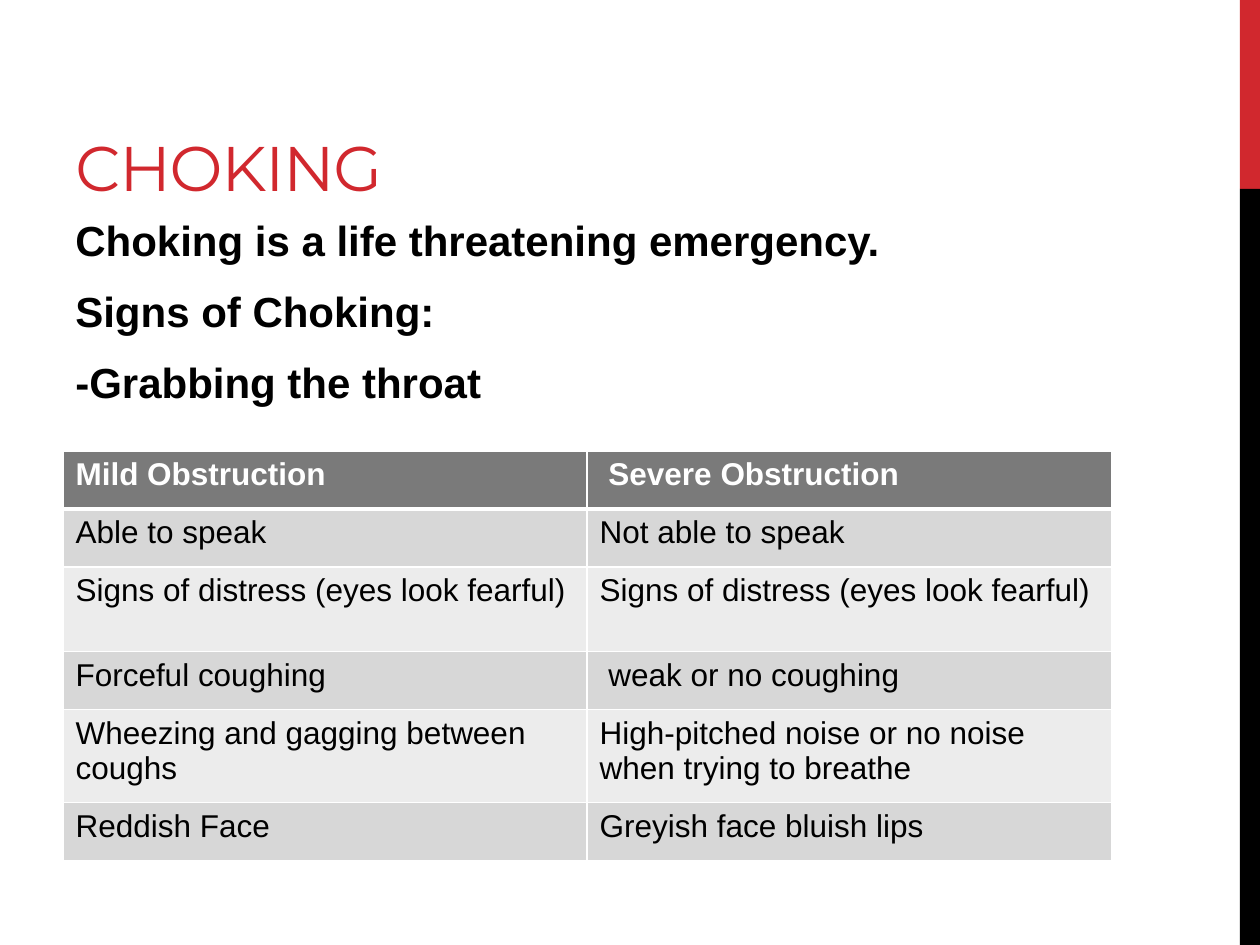
from lxml import etree
from pptx import Presentation
from pptx.dml.color import RGBColor
from pptx.enum.shapes import MSO_SHAPE
from pptx.enum.text import MSO_ANCHOR
from pptx.oxml.ns import qn
from pptx.util import Inches, Pt

RECT = MSO_SHAPE.RECTANGLE
TOP, BOTTOM = MSO_ANCHOR.TOP, MSO_ANCHOR.BOTTOM
COLORS = {"red": "D1282E", "black": "000000", "white": "FFFFFF",
          "head": "7A7A7A", "dark": "D7D7D7", "light": "ECECEC"}
TITLE = {"name": "Montserrat", "size": Pt(36), "bold": False}
BODY = {"name": "Arial", "size": Pt(24), "bold": True}
HEAD = {"name": "Arial", "size": Pt(18), "bold": True}
CELL = {"name": "Arial", "size": Pt(18), "bold": False}


def write(par, text, style, color):
    """Add one styled run to a paragraph and return it."""
    run = par.add_run()
    run.text = text
    for key, value in style.items():
        setattr(run.font, key, value)
    run.font.color.rgb = RGBColor.from_string(COLORS[color])
    return run


def edge(cell, widths):
    """Draw white cell borders, with widths in points by side."""
    props = cell._tc.get_or_add_tcPr()
    for spot, (side, width) in enumerate(widths.items()):
        line = etree.Element(qn(f"a:ln{side}"), w=str(Pt(width)))
        fill = etree.SubElement(line, qn("a:solidFill"))
        etree.SubElement(fill, qn("a:srgbClr"), val=COLORS["white"])
        props.insert(spot, line)


prs = Presentation()
prs.slide_width, prs.slide_height = Inches(10), Inches(7.5)
slide = prs.slides.add_slide(prs.slide_layouts[6])
shapes = slide.shapes

# Side bar
for top, height, color in [(0, 1.5, "red"), (1.5, 6, "black")]:
    bar = shapes.add_shape(RECT, Inches(9.84), Inches(top),
                           Inches(0.16), Inches(height))
    bar.shadow.inherit = False
    bar.fill.solid()
    bar.fill.fore_color.rgb = RGBColor.from_string(COLORS[color])
    bar.line.fill.background()

# Title and body
title = shapes.add_textbox(Inches(0.5), Inches(0.17),
                           Inches(6.33), Inches(1.5)).text_frame
title.word_wrap = True
title.vertical_anchor = BOTTOM
run = write(title.paragraphs[0], "CHOKING", TITLE, "red")
run.font._element.set("spc", "-60")

body = shapes.add_textbox(Inches(0.5), Inches(1.65),
                          Inches(8.33), Inches(2.5)).text_frame
body.word_wrap = True
body.vertical_anchor = TOP
lines = ["Choking is a life threatening emergency.",
         "Signs of Choking:", "-Grabbing the throat"]
for i, text in enumerate(lines):
    par = body.add_paragraph() if i else body.paragraphs[0]
    par.space_before, par.space_after = Pt(5.8), Pt(6)
    write(par, text, BODY, "black")

# Signs table
rows = [
    (0.46, "Mild Obstruction", " Severe Obstruction"),
    (0.46, "Able to speak", "Not able to speak"),
    (0.67, "Signs of distress (eyes look fearful)",
     "Signs of distress (eyes look fearful)"),
    (0.46, "Forceful coughing", " weak or no coughing"),
    (0.74, "Wheezing and gagging between coughs",
     "High-pitched noise or no noise when trying to breathe"),
    (0.46, "Reddish Face", "Greyish face bluish lips"),
]
table = shapes.add_table(len(rows), 2, Inches(0.5), Inches(3.58),
                         Inches(8.33), Inches(3.25)).table
for col in table.columns:
    col.width = Inches(4.16)
for r, (height, *texts) in enumerate(rows):
    table.rows[r].height = Inches(height)
    shade = ("dark" if r % 2 else "light") if r else "head"
    style, color = (CELL, "black") if r else (HEAD, "white")
    for c, text in enumerate(texts):
        cell = table.cell(r, c)
        cell.fill.solid()
        cell.fill.fore_color.rgb = RGBColor.from_string(COLORS[shade])
        edge(cell, {"L": 1, "R": 1, "T": 3 if r == 1 else 1,
                    "B": 1 if r else 3})
        write(cell.text_frame.paragraphs[0], text, style, color)

prs.save("out.pptx")
